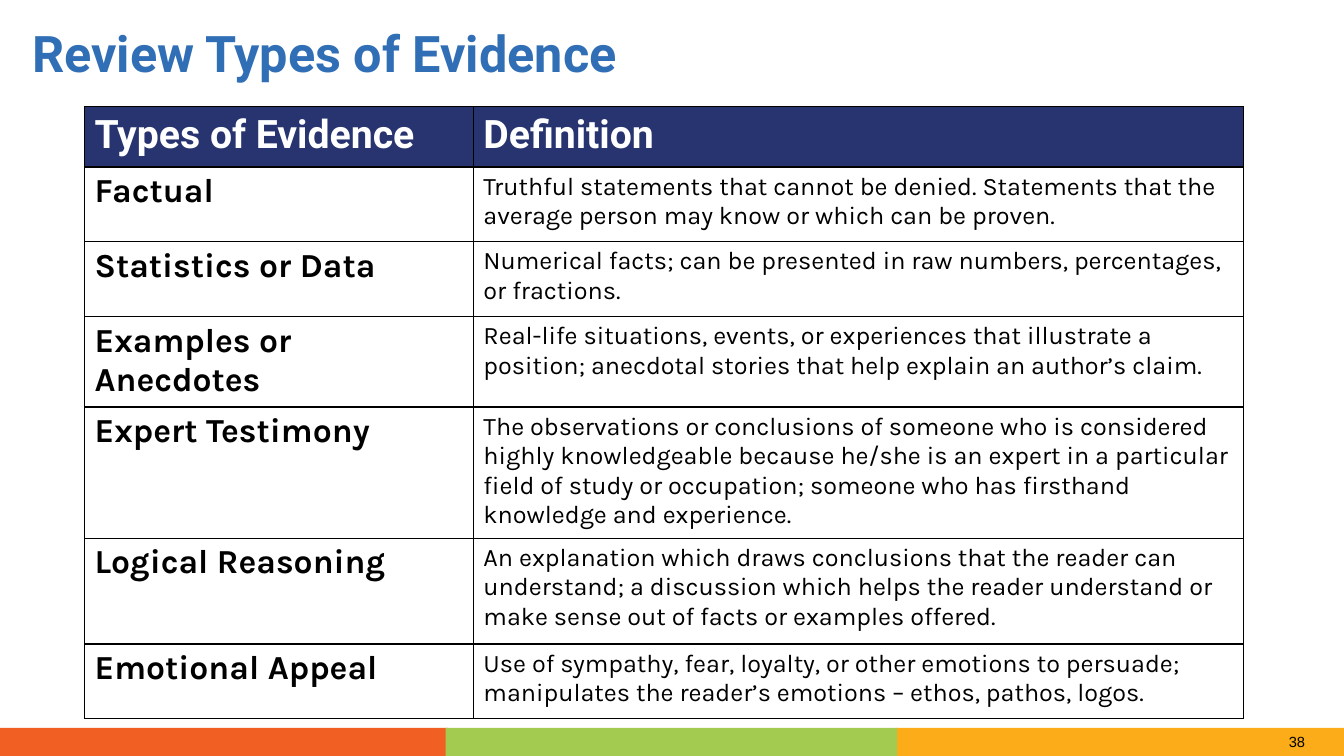
from lxml import etree
from pptx import Presentation
from pptx.dml.color import RGBColor
from pptx.enum.shapes import MSO_SHAPE
from pptx.enum.text import MSO_ANCHOR, PP_ALIGN
from pptx.oxml.ns import qn
from pptx.util import Cm, Pt

RECTANGLE = MSO_SHAPE.RECTANGLE
MIDDLE = MSO_ANCHOR.MIDDLE
LEFT = PP_ALIGN.LEFT

# Content
TITLE = "Review Types of Evidence"
PAGE_NUMBER = "38"
HEADINGS = ("Types of Evidence", "Definition")
EVIDENCE = [
    ("Factual",
     "Truthful statements that cannot be denied. Statements that the average "
     "person may know or which can be proven."),
    ("Statistics or Data",
     "Numerical facts; can be presented in raw numbers, percentages, or fractions."),
    ("Examples or Anecdotes",
     "Real-life situations, events, or experiences that illustrate a position; "
     "anecdotal stories that help explain an author’s claim."),
    ("Expert Testimony",
     "The observations or conclusions of someone who is considered highly "
     "knowledgeable because he/she is an expert in a particular field of study or "
     "occupation; someone who has firsthand knowledge and experience."),
    ("Logical Reasoning",
     "An explanation which draws conclusions that the reader can understand; a "
     "discussion which helps the reader understand or make sense out of facts or "
     "examples offered."),
    ("Emotional Appeal",
     "Use of sympathy, fear, loyalty, or other emotions to persuade; manipulates "
     "the reader’s emotions – ethos, pathos, logos."),
]

# Layout in centimetres
SLIDE_SIZE = (33.87, 19.05)
COLUMN_WIDTHS = (9.8, 19.41)
ROW_HEIGHTS = (1.52, 1.88, 1.88, 1.88, 2.67, 2.67, 1.88)
BAND_TOP, BAND_HEIGHT = 18.34, 0.71
BANDS = [  # left, width, colour
    (22.58, 11.29, "FBAC18"),
    (0, 11.29, "F15F22"),
    (11.23, 11.38, "A2CB4F"),
]


def color(hex_code):
    return RGBColor.from_string(hex_code)


def add_run(paragraph, text, size, font, hex_code, bold=False):
    run = paragraph.add_run()
    run.text = text
    run.font.size = Pt(size)
    run.font.name = font
    run.font.bold = bold
    run.font.color.rgb = color(hex_code)


def fill_cell(cell, fill):
    """Give a cell its borders, then its fill."""
    properties = cell._tc.get_or_add_tcPr()
    for side in ("a:lnL", "a:lnR", "a:lnT", "a:lnB"):
        border = etree.SubElement(properties, qn(side), w=str(Pt(1)))
        solid = etree.SubElement(border, qn("a:solidFill"))
        etree.SubElement(solid, qn("a:srgbClr"), val="000000")
    cell.fill.solid()
    cell.fill.fore_color.rgb = color(fill)


def add_bands(slide):
    for left, width, fill in BANDS:
        band = slide.shapes.add_shape(
            RECTANGLE, Cm(left), Cm(BAND_TOP), Cm(width), Cm(BAND_HEIGHT))
        band.shadow.inherit = False
        band.fill.solid()
        band.fill.fore_color.rgb = color(fill)
        band.line.fill.background()


def add_page_number(slide):
    number = slide.shapes.add_textbox(
        Cm(32.23), Cm(BAND_TOP), Cm(0.97), Cm(BAND_HEIGHT))
    add_run(number.text_frame.paragraphs[0], PAGE_NUMBER, 10.5, "Arial", "000000")


def set_title(slide):
    title = slide.shapes.title
    title.left, title.top, title.width, title.height = (
        Cm(0.81), Cm(0.81), Cm(31.5), Cm(1.19))
    frame = title.text_frame
    frame.margin_left = frame.margin_right = 0
    frame.margin_top = frame.margin_bottom = 0
    frame.vertical_anchor = MIDDLE
    paragraph = frame.paragraphs[0]
    paragraph.alignment = LEFT
    paragraph.line_spacing = 0.9
    add_run(paragraph, TITLE, 36, "Roboto", "306EB6", bold=True)


def add_evidence_table(slide):
    evidence = slide.shapes.add_table(
        len(ROW_HEIGHTS), len(COLUMN_WIDTHS), Cm(2.13), Cm(2.69),
        Cm(sum(COLUMN_WIDTHS)), Cm(sum(ROW_HEIGHTS))).table
    for column, width in zip(evidence.columns, COLUMN_WIDTHS):
        column.width = Cm(width)
    for row, height in zip(evidence.rows, ROW_HEIGHTS):
        row.height = Cm(height)

    for r, texts in enumerate([HEADINGS] + EVIDENCE):
        for c, text in enumerate(texts):
            cell = evidence.cell(r, c)
            paragraph = cell.text_frame.paragraphs[0]
            if r == 0:
                fill_cell(cell, "27346F")
                add_run(paragraph, text, 28, "Roboto", "FFFFFF", bold=True)
            else:
                fill_cell(cell, "FFFFFF")
                is_type = c == 0
                add_run(paragraph, text, 24 if is_type else 18, "Karla", "000000",
                        bold=is_type)


def main():
    deck = Presentation()
    deck.slide_width, deck.slide_height = (Cm(side) for side in SLIDE_SIZE)
    slide = deck.slides.add_slide(deck.slide_layouts[5])
    add_bands(slide)
    add_page_number(slide)
    set_title(slide)
    add_evidence_table(slide)
    deck.save("out.pptx")


if __name__ == "__main__":
    main()
